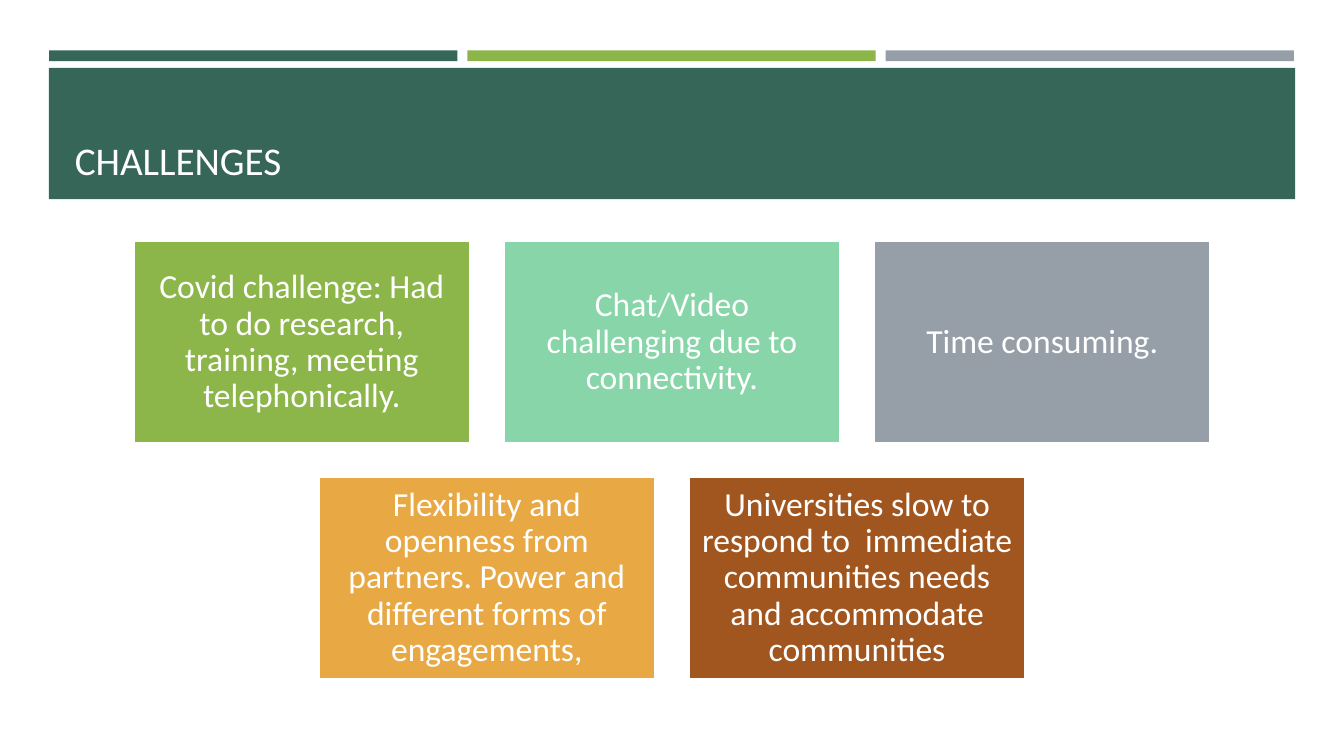
"""Build the Challenges slide: a banner title above five coloured cards."""
import pptx
import pptx.dml.color
import pptx.enum.shapes
import pptx.enum.text
import pptx.util

Cm = pptx.util.Cm
Pt = pptx.util.Pt
RGBColor = pptx.dml.color.RGBColor
PP_ALIGN = pptx.enum.text.PP_ALIGN
MSO_ANCHOR = pptx.enum.text.MSO_ANCHOR

TEAL = RGBColor(0x36, 0x66, 0x58)
GREEN = RGBColor(0x8C, 0xB6, 0x4A)
GREY = RGBColor(0x96, 0x9F, 0xA7)
MINT = RGBColor(0x88, 0xD5, 0xA9)
AMBER = RGBColor(0xE8, 0xA8, 0x44)
BROWN = RGBColor(0xA1, 0x56, 0x1F)
WHITE = RGBColor(0xFF, 0xFF, 0xFF)
OFF_WHITE = RGBColor(0xFF, 0xFE, 0xFF)

FONT = "Calibri"
SLIDE_W, SLIDE_H = 33.87, 19.05
CARD_W, CARD_H, CARD_GAP = 8.48, 5.09, 0.85
CARDS_TOP = 6.08
CARD_ROWS = [
    [
        ("Covid challenge: Had to do research, training, meeting telephonically.", GREEN),
        ("Chat/Video challenging due to connectivity.", MINT),
        ("Time consuming.", GREY),
    ],
    [
        ("Flexibility and openness from partners. Power and different forms of engagements,", AMBER),
        ("Universities slow to respond to  immediate communities needs and accommodate communities", BROWN),
    ],
]


def add_block(slide, left, top, width, height, color):
    sp = slide.shapes.add_shape(
        pptx.enum.shapes.MSO_SHAPE.RECTANGLE, Cm(left), Cm(top), Cm(width), Cm(height)
    )
    sp.shadow.inherit = False
    sp.fill.solid()
    sp.fill.fore_color.rgb = color
    sp.line.fill.background()
    return sp


def format_paragraph(p, size, color, align):
    p.alignment = align
    p.line_spacing = 0.9
    p.font.name = FONT
    p.font.size = Pt(size)
    p.font.color.rgb = color


def add_card(slide, left, top, text, color):
    sp = add_block(slide, left, top, CARD_W, CARD_H, color)
    sp.line.color.rgb = WHITE
    sp.line.width = Pt(1.75)
    tf = sp.text_frame
    tf.word_wrap = True
    tf.vertical_anchor = MSO_ANCHOR.MIDDLE
    tf.margin_left = tf.margin_right = tf.margin_top = tf.margin_bottom = Cm(0.25)
    tf.text = text
    format_paragraph(tf.paragraphs[0], 24, WHITE, PP_ALIGN.CENTER)


def add_card_rows(slide):
    for i, row in enumerate(CARD_ROWS):
        row_w = len(row) * (CARD_W + CARD_GAP) - CARD_GAP
        left = (SLIDE_W - row_w) / 2
        top = CARDS_TOP + i * (CARD_H + CARD_GAP)
        for j, (text, color) in enumerate(row):
            add_card(slide, left + j * (CARD_W + CARD_GAP), top, text, color)


def add_banner(slide):
    for i, color in enumerate([TEAL, GREEN, GREY]):
        add_block(slide, 1.24 + i * 10.54, 1.27, 10.29, 0.27, color)
    add_block(slide, 1.23, 1.71, 31.41, 3.31, TEAL)


def set_title(slide, text):
    sp = slide.shapes.title
    slide.shapes._spTree.append(sp._element)
    sp.left, sp.top, sp.width, sp.height = Cm(1.63), Cm(1.95), Cm(30.62), Cm(2.82)
    tf = sp.text_frame
    tf.word_wrap = True
    tf.vertical_anchor = MSO_ANCHOR.BOTTOM
    tf.text = text
    format_paragraph(tf.paragraphs[0], 28, OFF_WHITE, PP_ALIGN.LEFT)


def main():
    prs = pptx.Presentation()
    prs.slide_width, prs.slide_height = Cm(SLIDE_W), Cm(SLIDE_H)
    slide = prs.slides.add_slide(prs.slide_layouts[5])
    add_banner(slide)
    set_title(slide, "CHALLENGES")
    add_card_rows(slide)
    prs.save("out.pptx")


if __name__ == "__main__":
    main()
